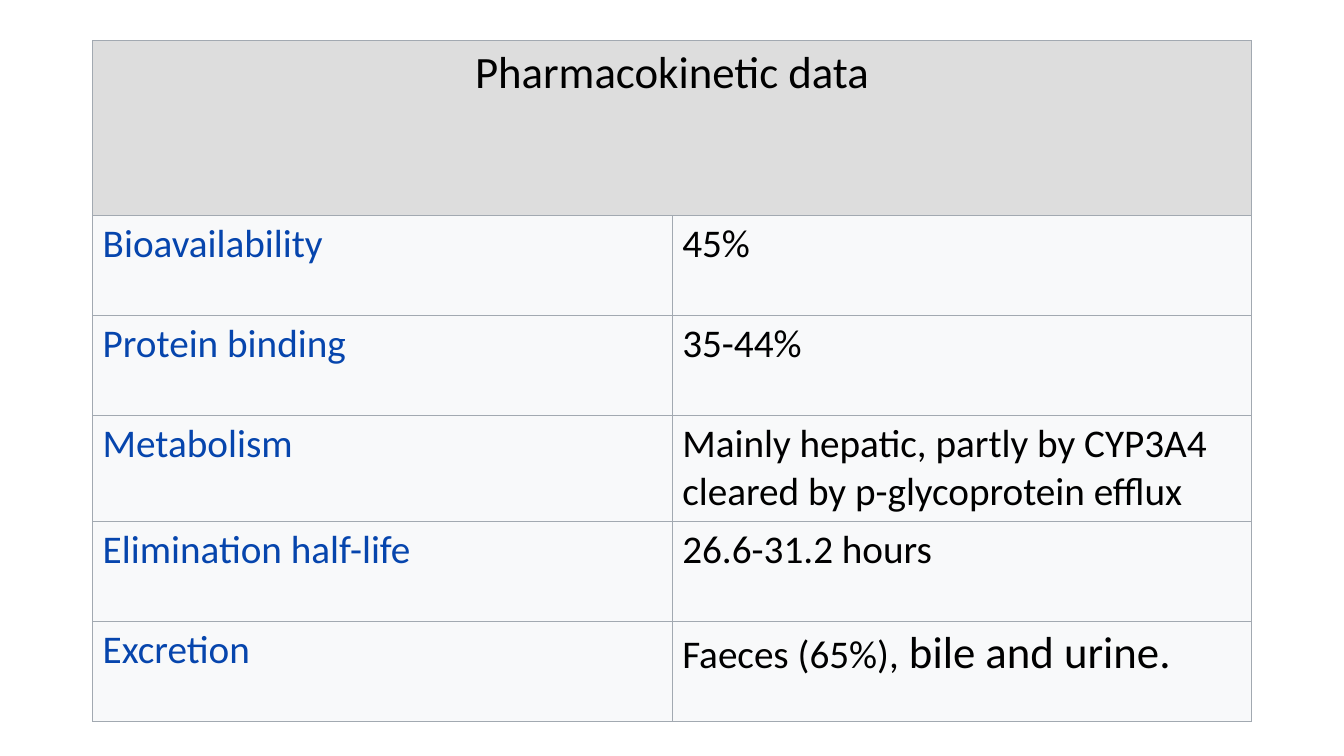
"""Build a slide with a table of pharmacokinetic data."""
from dataclasses import dataclass

from lxml.etree import SubElement
from pptx import Presentation
from pptx.dml.color import RGBColor as Rgb
from pptx.enum.text import PP_ALIGN as Align
from pptx.oxml.ns import qn
from pptx.table import _Cell as Cell
from pptx.util import Pt

COLORS = {
    "heading_fill": "DDDDDD",
    "row_fill": "F8F9FA",
    "border": "A2A9B1",
    "property": "0645AD",
    "text": "000000",
}
HEADING_SIZE, BODY_SIZE = 32, 28
HEADING_HEIGHT, ROW_HEIGHT = 125, 71.4
COLUMN_WIDTH = 414
TABLE_LEFT, TABLE_TOP = 66.2, 29
BORDER_WIDTH = 0.75


@dataclass(frozen=True)
class Phrase:
    text: str
    size: float = BODY_SIZE
    color: str = "text"


@dataclass(frozen=True)
class Measure:
    property: str
    value: tuple[Phrase, ...]


MEASURES = (
    Measure("Bioavailability", (Phrase("45%"),)),
    Measure("Protein binding", (Phrase("35-44%"),)),
    Measure(
        "Metabolism",
        (Phrase("Mainly hepatic, partly by CYP3A4 cleared by p-glycoprotein efflux"),),
    ),
    Measure("Elimination half-life", (Phrase("26.6-31.2 hours"),)),
    Measure(
        "Excretion",
        (Phrase("Faeces (65%),"), Phrase(" bile and urine.", HEADING_SIZE)),
    ),
)


def draw_borders(cell: Cell) -> None:
    """Outline all four sides of a cell."""
    properties = cell._tc.get_or_add_tcPr()
    for side in "LRTB":
        border = SubElement(properties, qn(f"a:ln{side}"), w=str(Pt(BORDER_WIDTH)))
        fill = SubElement(border, qn("a:solidFill"))
        SubElement(fill, qn("a:srgbClr"), val=COLORS["border"])


def fill_cell(
    cell: Cell, phrases: tuple[Phrase, ...], fill: str, align: Align = Align.LEFT
) -> None:
    """Format a cell and write its phrases."""
    draw_borders(cell)
    cell.fill.solid()
    cell.fill.fore_color.rgb = Rgb.from_string(COLORS[fill])
    paragraph = cell.text_frame.paragraphs[0]
    paragraph.alignment = align
    for phrase in phrases:
        run = paragraph.add_run()
        run.text = phrase.text
        run.font.color.rgb = Rgb.from_string(COLORS[phrase.color])
        font_format = {"name": "Calibri", "size": Pt(phrase.size), "bold": False}
        for attribute, value in font_format.items():
            setattr(run.font, attribute, value)


def main() -> None:
    """Create and save the presentation."""
    deck = Presentation()
    deck.slide_width, deck.slide_height = Pt(960), Pt(540)
    slide = deck.slides.add_slide(deck.slide_layouts[6])
    row_count = len(MEASURES) + 1
    pharmacokinetics = slide.shapes.add_table(
        row_count, 2, Pt(TABLE_LEFT), Pt(TABLE_TOP), Pt(2 * COLUMN_WIDTH),
        Pt(HEADING_HEIGHT + ROW_HEIGHT * len(MEASURES)),
    ).table
    table_format = {"first_row": False, "horz_banding": False}
    for attribute, value in table_format.items():
        setattr(pharmacokinetics, attribute, value)
    for column in pharmacokinetics.columns:
        column.width = Pt(COLUMN_WIDTH)
    for index, row in enumerate(pharmacokinetics.rows):
        row.height = Pt(ROW_HEIGHT if index else HEADING_HEIGHT)

    heading, heading_end = pharmacokinetics.rows[0].cells
    heading.merge(heading_end)
    fill_cell(heading_end, (), "heading_fill")
    title = Phrase("Pharmacokinetic data", HEADING_SIZE)
    fill_cell(heading, (title,), "heading_fill", Align.CENTER)
    for index, measure in enumerate(MEASURES, start=1):
        label = Phrase(measure.property, color="property")
        for column, phrases in enumerate(((label,), measure.value)):
            fill_cell(pharmacokinetics.cell(index, column), phrases, "row_fill")
    deck.save("out.pptx")


if __name__ == "__main__":
    main()
